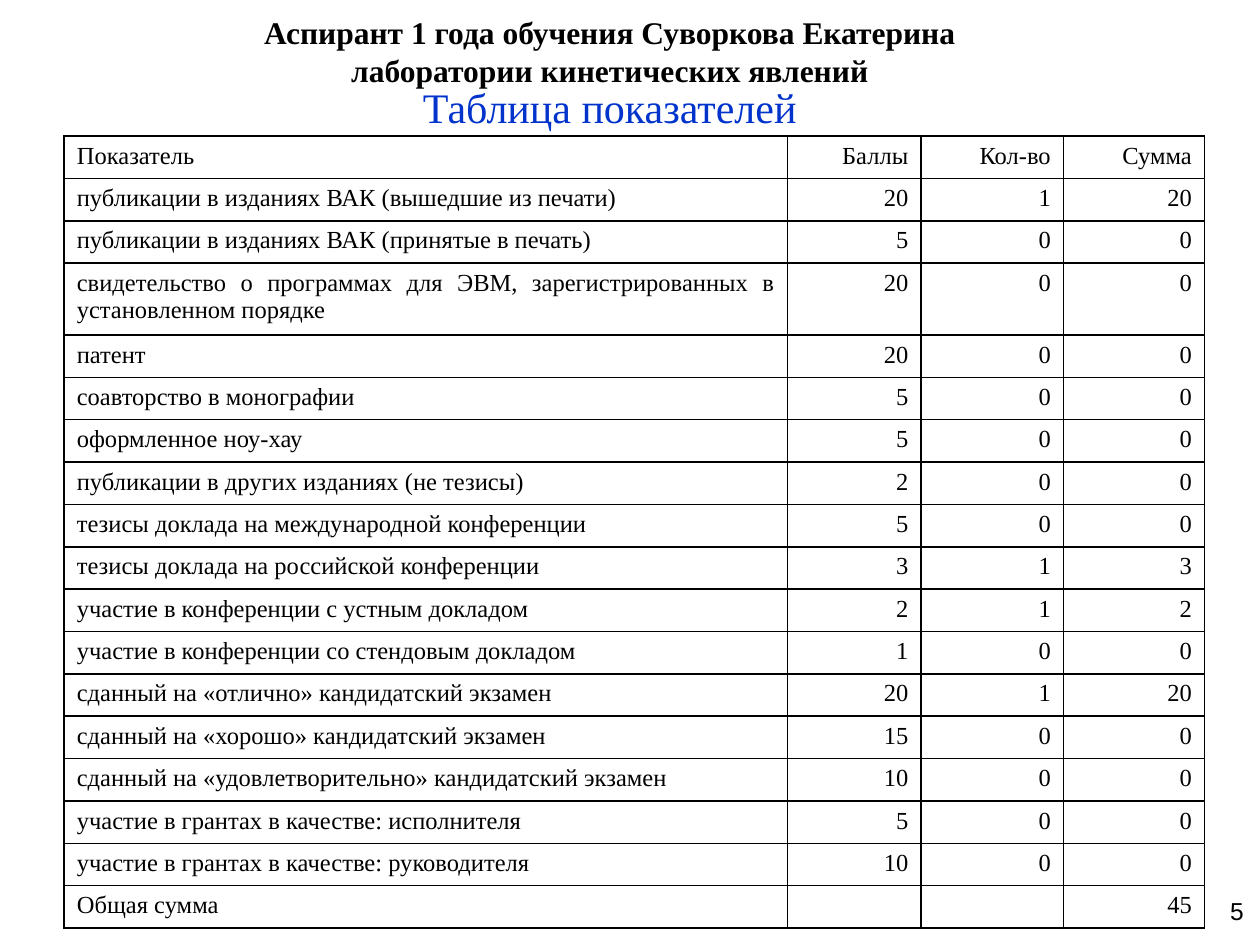
from lxml.etree import SubElement
from pptx import Presentation
from pptx.dml.color import RGBColor
from pptx.enum.text import MSO_ANCHOR, PP_ALIGN
from pptx.oxml.ns import qn
from pptx.util import Inches, Pt

BLACK = RGBColor(0x00, 0x00, 0x00)
BLUE = RGBColor(0x00, 0x33, 0xCC)
SERIF = "Times New Roman"
CELL_SIZE = Pt(14)

COLUMN_WIDTHS = (5.74, 1.06, 1.13, 1.12)
TABLE_HEIGHT = 6.29
TALL_ROW = 3
TALL_ROW_HEIGHT = 0.57

HEADER = ("Показатель", "Баллы", "Кол-во", "Сумма")
# Indicator, points, count
INDICATORS = (
    ("публикации в изданиях ВАК (вышедшие из печати)", 20, 1),
    ("публикации в изданиях ВАК (принятые в печать)", 5, 0),
    ("свидетельство о программах для ЭВМ, зарегистрированных в установленном порядке", 20, 0),
    ("патент", 20, 0),
    ("соавторство в монографии", 5, 0),
    ("оформленное ноу-хау", 5, 0),
    ("публикации в других изданиях (не тезисы)", 2, 0),
    ("тезисы доклада на международной конференции", 5, 0),
    ("тезисы доклада на российской конференции", 3, 1),
    ("участие в конференции с устным докладом", 2, 1),
    ("участие в конференции со стендовым докладом", 1, 0),
    ("сданный на «отлично» кандидатский экзамен", 20, 1),
    ("сданный на «хорошо» кандидатский экзамен", 15, 0),
    ("сданный на «удовлетворительно» кандидатский экзамен", 10, 0),
    ("участие в грантах в качестве: исполнителя", 5, 0),
    ("участие в грантах в качестве: руководителя", 10, 0),
)


def format_paragraph(paragraph, align, size, color=BLACK, font=SERIF, bold=False):
    paragraph.alignment = align
    for span in paragraph.runs:
        span.font.name = font
        span.font.size = size
        span.font.bold = bold
        span.font.color.rgb = color


def add_text(slide, text, left, top, width, height, align, size,
             anchor=MSO_ANCHOR.TOP, **style):
    box = slide.shapes.add_textbox(Inches(left), Inches(top), Inches(width), Inches(height))
    frame = box.text_frame
    frame.word_wrap = True
    frame.vertical_anchor = anchor
    para = frame.paragraphs[0]
    para.text = text
    format_paragraph(para, align, size, **style)
    return para


def add_borders(cell):
    properties = cell._tc.get_or_add_tcPr()
    for side in ("a:lnL", "a:lnR", "a:lnT", "a:lnB"):
        line = SubElement(properties, qn(side), w=str(Pt(1)))
        fill = SubElement(line, qn("a:solidFill"))
        SubElement(fill, qn("a:srgbClr"), val=str(BLACK))


def fill_cell(cell, text, align):
    add_borders(cell)
    cell.fill.background()
    para = cell.text_frame.paragraphs[0]
    para.text = text
    format_paragraph(para, align, CELL_SIZE)
    if not text:
        # An empty cell still needs its size, or it would stretch the row
        SubElement(para._p, qn("a:endParaRPr"), sz=str(int(CELL_SIZE.pt * 100)))


def table_rows():
    scored = [(name, points, count, points * count) for name, points, count in INDICATORS]
    total = sum(row[-1] for row in scored)
    return [HEADER, *scored, ("Общая сумма", "", "", total)]


def add_score_table(slide):
    rows = table_rows()
    frame = slide.shapes.add_table(
        len(rows), len(COLUMN_WIDTHS), Inches(0.51), Inches(1.08),
        Inches(sum(COLUMN_WIDTHS)), Inches(TABLE_HEIGHT))
    table = frame.table
    table.first_row = False
    table.horz_banding = False
    for column, width in zip(table.columns, COLUMN_WIDTHS):
        column.width = Inches(width)
    row_height = (TABLE_HEIGHT - TALL_ROW_HEIGHT) / (len(rows) - 1)
    for index, values in enumerate(rows):
        table.rows[index].height = Inches(TALL_ROW_HEIGHT if index == TALL_ROW else row_height)
        for column, value in enumerate(values):
            align = PP_ALIGN.RIGHT if column else PP_ALIGN.JUSTIFY
            fill_cell(table.cell(index, column), str(value), align)


def main():
    deck = Presentation()
    deck.slide_width = Inches(10)
    deck.slide_height = Inches(7.5)
    slide = deck.slides.add_slide(deck.slide_layouts[6])

    add_score_table(slide)
    heading = add_text(slide, "Таблица показателей", 1.34, 0.6, 7, 0.47,
                       PP_ALIGN.CENTER, Pt(24), color=BLUE)
    heading.space_before = Pt(5)
    add_text(slide, "Аспирант 1 года обучения Суворкова Екатерина\vлаборатории кинетических явлений",
             0.59, 0.05, 8.5, 0.71, PP_ALIGN.CENTER, Pt(18),
             anchor=MSO_ANCHOR.MIDDLE, bold=True)
    add_text(slide, "5", 7.64, 7.06, 2.33, 0.52, PP_ALIGN.RIGHT, Pt(14), font="Arial")

    deck.save("out.pptx")


if __name__ == "__main__":
    main()
